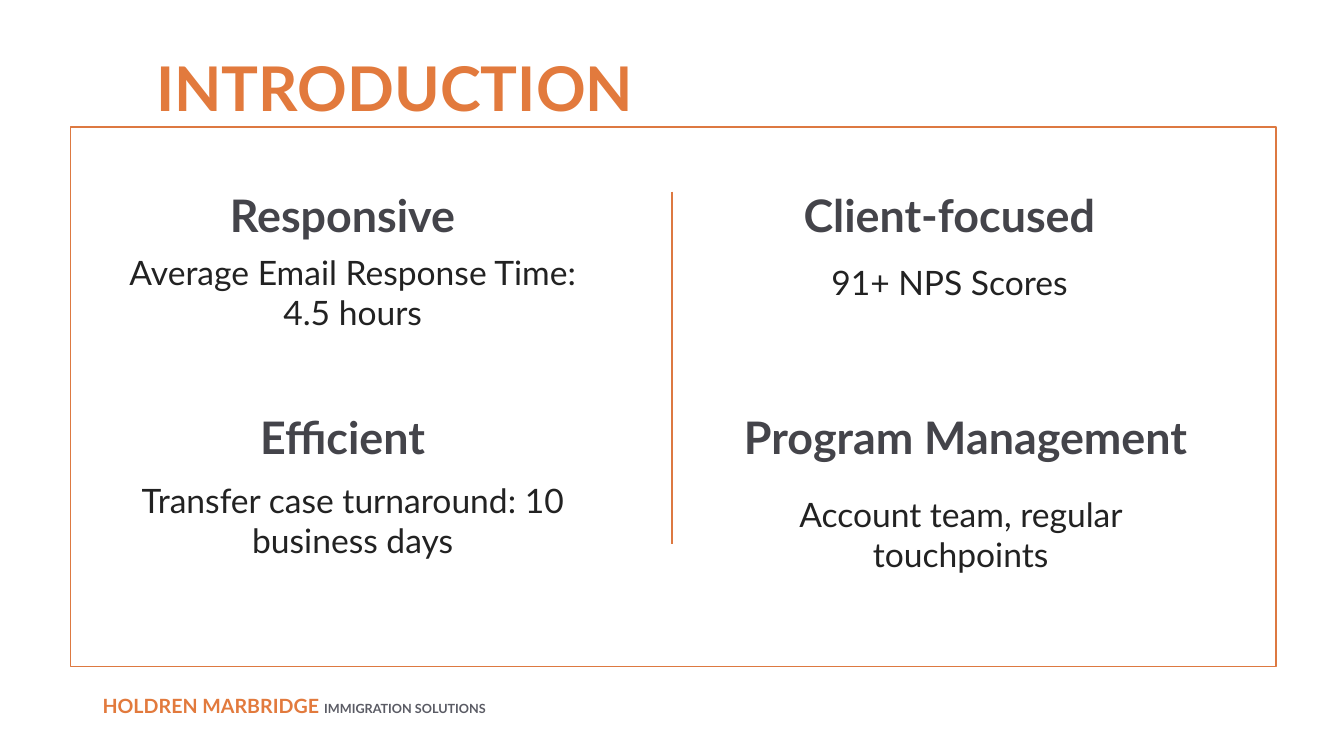
from dataclasses import dataclass

from lxml.etree import SubElement
from pptx import Presentation
from pptx.dml.color import RGBColor
from pptx.enum.shapes import MSO_CONNECTOR, MSO_SHAPE
from pptx.enum.text import MSO_ANCHOR, MSO_AUTO_SIZE, PP_ALIGN
from pptx.oxml.ns import qn
from pptx.shapes.autoshape import Shape
from pptx.slide import Slide
from pptx.text.text import Font
from pptx.util import Pt

COLOURS = {
    "orange": "E27A3D",
    "rule": "DD7941",
    "heading": "44444A",
    "body": "222222",
    "tagline": "5A5B64",
    "white": "FFFFFF",
}
FONT_NAME = "Lato"
COLUMN_WIDTH = 357.1
HEADING_HEIGHT = 46.1
LEFT_HEADING = 66.2
LEFT_DETAIL = 73.4
RIGHT_COLUMN = 499.7


@dataclass(frozen=True)
class TextStyle:
    size: float
    colour: str
    bold: bool


@dataclass(frozen=True)
class Label:
    text: str
    left: float
    top: float
    width: float
    height: float
    style: TextStyle


HEADING = TextStyle(32, "heading", True)
DETAIL = TextStyle(24, "body", False)
TITLE = TextStyle(44, "orange", True)
BRAND = TextStyle(14, "orange", True)
TAGLINE = TextStyle(9, "tagline", True)

LABELS = [
    Label("Responsive", LEFT_HEADING, 130.3, COLUMN_WIDTH, HEADING_HEIGHT, HEADING),
    Label("Average Email Response Time: 4.5 hours", LEFT_DETAIL, 176.4, COLUMN_WIDTH, 65.5, DETAIL),
    Label("Client-focused", RIGHT_COLUMN, 130.3, COLUMN_WIDTH, HEADING_HEIGHT, HEADING),
    Label("91+ NPS Scores", RIGHT_COLUMN, 183.6, COLUMN_WIDTH, 36, DETAIL),
    Label("Efficient", LEFT_HEADING, 289.4, COLUMN_WIDTH, HEADING_HEIGHT, HEADING),
    Label("Transfer case turnaround: 10 business days", LEFT_DETAIL, 339.1, COLUMN_WIDTH, 65.5, DETAIL),
    Label("Program Management", RIGHT_COLUMN, 288.9, 380.2, HEADING_HEIGHT, HEADING),
    Label("Account team, regular touchpoints", 507.6, 349.2, COLUMN_WIDTH, 65.5, DETAIL),
]


def colour(name: str) -> RGBColor:
    """Look up a named colour."""
    return RGBColor.from_string(COLOURS[name])


def apply_style(font: Font, style: TextStyle) -> None:
    """Format a font with a text style."""
    font.name = FONT_NAME
    font.size = Pt(style.size)
    font.bold = style.bold
    font.color.rgb = colour(style.colour)


def add_box(page: Slide, left: float, top: float, width: float, height: float) -> Shape:
    """Add an empty wrapping text box."""
    box = page.shapes.add_textbox(Pt(left), Pt(top), Pt(width), Pt(height))
    box.text_frame.word_wrap = True
    box.text_frame.auto_size = MSO_AUTO_SIZE.SHAPE_TO_FIT_TEXT
    return box


def add_label(page: Slide, label: Label) -> None:
    """Add one centred heading or detail."""
    box = add_box(page, label.left, label.top, label.width, label.height)
    para = box.text_frame.paragraphs[0]
    para.text = label.text
    para.alignment = PP_ALIGN.CENTER
    apply_style(para.runs[0].font, label.style)


def add_footer(page: Slide) -> None:
    """Add the firm name and its tagline."""
    para = add_box(page, 66.2, 491.8, 475.2, 46.1).text_frame.paragraphs[0]
    for text, style in (("HOLDREN MARBRIDGE ", BRAND), ("IMMIGRATION SOLUTIONS", TAGLINE)):
        span = para.add_run()
        span.text = text
        apply_style(span.font, style)


def add_frame(page: Slide) -> None:
    """Add the outlined panel and its vertical divider."""
    frame = page.shapes.add_shape(MSO_SHAPE.RECTANGLE, Pt(50.4), Pt(90.7), Pt(861.1), Pt(385.2))
    frame.shadow.inherit = False
    frame.fill.solid()
    frame.fill.fore_color.rgb = colour("white")
    divider = page.shapes.add_connector(MSO_CONNECTOR.STRAIGHT, Pt(480), Pt(136.8), Pt(480), Pt(388.8))
    for outlined in (frame, divider):
        outlined.line.color.rgb = colour("rule")
        outlined.line.width = Pt(1)
    SubElement(divider.element.spPr, qn("a:effectLst"))


def place_title(page: Slide) -> None:
    """Position and format the title in front of the panel."""
    title = page.shapes.title
    title.left, title.top, title.width, title.height = Pt(104.4), Pt(30.2), Pt(789.8), Pt(69.8)
    title.text_frame.text = "INTRODUCTION"
    title.text_frame.auto_size = MSO_AUTO_SIZE.NONE
    title.text_frame.vertical_anchor = MSO_ANCHOR.MIDDLE
    para = title.text_frame.paragraphs[0]
    para.alignment = PP_ALIGN.LEFT
    para.line_spacing = 0.9
    apply_style(para.runs[0].font, TITLE)
    title.element.getparent().append(title.element)


def main() -> None:
    """Build and save the slide."""
    deck = Presentation()
    deck.slide_width, deck.slide_height = Pt(960), Pt(540)
    page = deck.slides.add_slide(deck.slide_layouts.get_by_name("Title Only"))
    add_footer(page)
    add_frame(page)
    for label in LABELS:
        add_label(page, label)
    place_title(page)
    deck.save("out.pptx")


if __name__ == "__main__":
    main()
